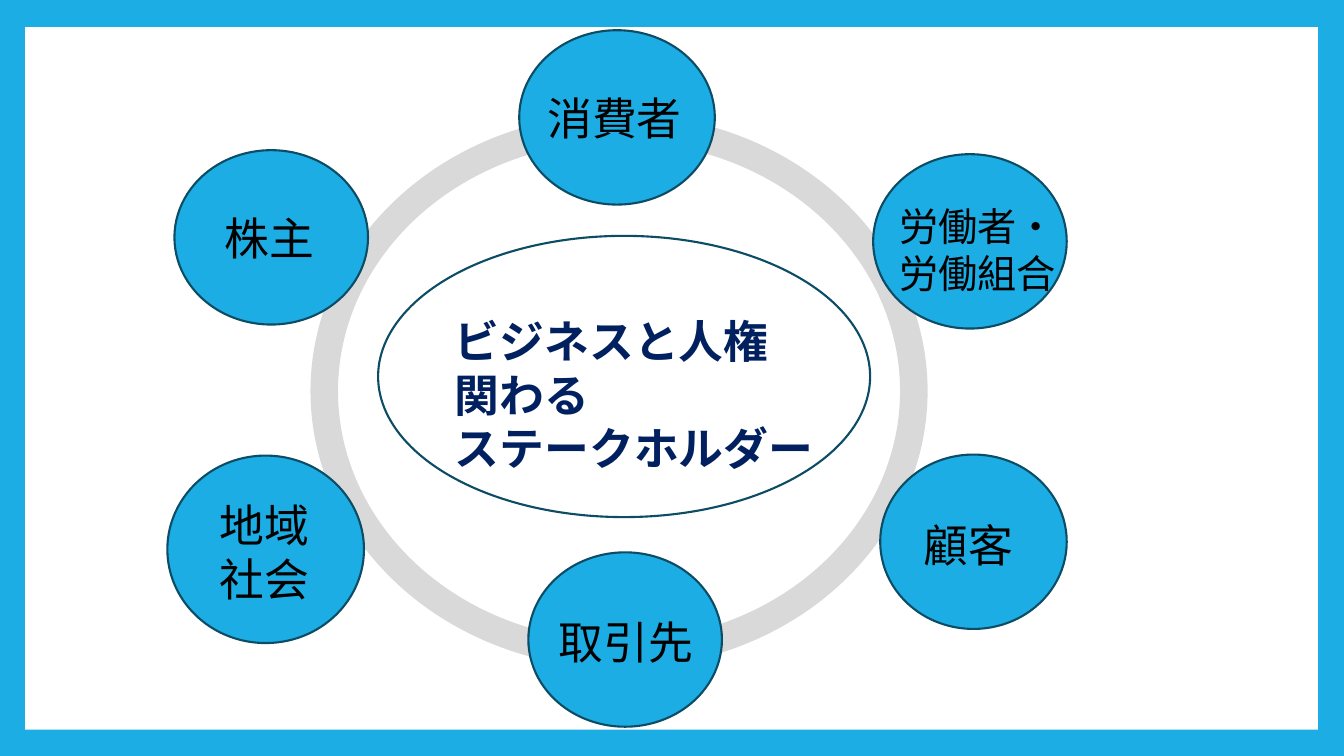
from lxml import etree
from pptx import Presentation
from pptx import util as u
from pptx.dml.color import RGBColor
from pptx.enum import shapes, text
from pptx.oxml.ns import qn

FONT = "Noto Sans CJK JP"
COLORS = {
    "blue": "1CADE4",
    "outline": "0C4C64",
    "ring": "D9D9D9",
    "white": "FFFFFF",
    "navy": "002060",
    "black": "000000",
}
STAKEHOLDERS = [
    ((5.15, 0.30, 1.94, 1.73), (0.18, 0.55), 32, ["消費者"]),
    ((8.66, 1.53, 1.92, 1.73), (0.16, 0.43), 28, ["労働者・", "労働組合"]),
    ((8.73, 4.51, 1.85, 1.73), (0.33, 0.58), 32, ["顧客"]),
    ((5.24, 5.48, 1.92, 1.73), (0.20, 0.57), 32, ["取引先"]),
    ((1.66, 4.52, 1.95, 1.86), (0.42, 0.37), 32, ["地域", "社会"]),
    ((1.73, 1.49, 1.92, 1.73), (0.40, 0.55), 32, ["株主"]),
]


def color(name):
    return RGBColor.from_string(COLORS[name])


def add_figure(s, kind, box, fill=None, line=None):
    sp = s.shapes.add_shape(kind, *map(u.Inches, box))
    sp.shadow.inherit = False
    if fill:
        sp.fill.solid()
        sp.fill.fore_color.rgb = color(fill)
    else:
        sp.fill.background()
    if line:
        sp.line.color.rgb = color(line)
        sp.line.width = u.Pt(1.5)
    else:
        sp.line.fill.background()
    return sp


def write_lines(tf, lines, size, ink, bold=False):
    tf.word_wrap = True
    tf.auto_size = text.MSO_AUTO_SIZE.NONE
    tf.vertical_anchor = text.MSO_ANCHOR.TOP
    for i, line in enumerate(lines):
        p = tf.add_paragraph() if i else tf.paragraphs[0]
        p.alignment = text.PP_ALIGN.LEFT
        p.line_spacing = u.Pt(size * 1.2)
        p.space_before = u.Pt(0)
        r = p.add_run()
        r.text = line
        r.font.size = u.Pt(size)
        r.font.bold = bold
        r.font.name = FONT
        r.font.color.rgb = color(ink)
        ea = etree.SubElement(r.font._element, qn("a:ea"))
        ea.set("typeface", FONT)


def add_frame(s, box):
    s.background.fill.solid()
    s.background.fill.fore_color.rgb = color("blue")
    add_figure(s, shapes.MSO_SHAPE.RECTANGLE, box, "white")


def add_ring(s, box):
    ring = add_figure(s, shapes.MSO_SHAPE.DONUT, box, "ring", "ring")
    ring.adjustments[0] = 0.046


def add_center(s, box):
    x, y, w, h = box
    add_figure(s, shapes.MSO_SHAPE.OVAL, box, line="outline")
    title = s.shapes.title
    title.left, title.top = u.Inches(x + 0.66), u.Inches(y + 0.72)
    title.width, title.height = u.Inches(w * 0.8), u.Inches(1.72)
    lines = ["ビジネスと人権", "関わる", "ステークホルダー"]
    write_lines(title.text_frame, lines, 32, "navy", True)
    s.shapes._spTree.append(title._element)


def add_stakeholder(s, box, offset, size, lines):
    x, y, w, h = box
    dx, dy = offset
    add_figure(s, shapes.MSO_SHAPE.OVAL, box, "blue", "outline")
    height = 0.1 + len(lines) * size * 1.2 / 72
    label = s.shapes.add_textbox(
        u.Inches(x + dx), u.Inches(y + dy), u.Inches(1.92), u.Inches(height)
    )
    write_lines(label.text_frame, lines, size, "black")


def main():
    prs = Presentation()
    prs.slide_width, prs.slide_height = u.Inches(13.33), u.Inches(7.5)
    s = prs.slides.add_slide(prs.slide_layouts[5])
    add_frame(s, (0.25, 0.27, 12.82, 6.97))
    add_ring(s, (3.09, 1.14, 6.1, 5.48))
    add_center(s, (3.75, 2.34, 4.88, 2.79))
    for box, offset, size, lines in STAKEHOLDERS:
        add_stakeholder(s, box, offset, size, lines)
    prs.save("out.pptx")


if __name__ == "__main__":
    main()
